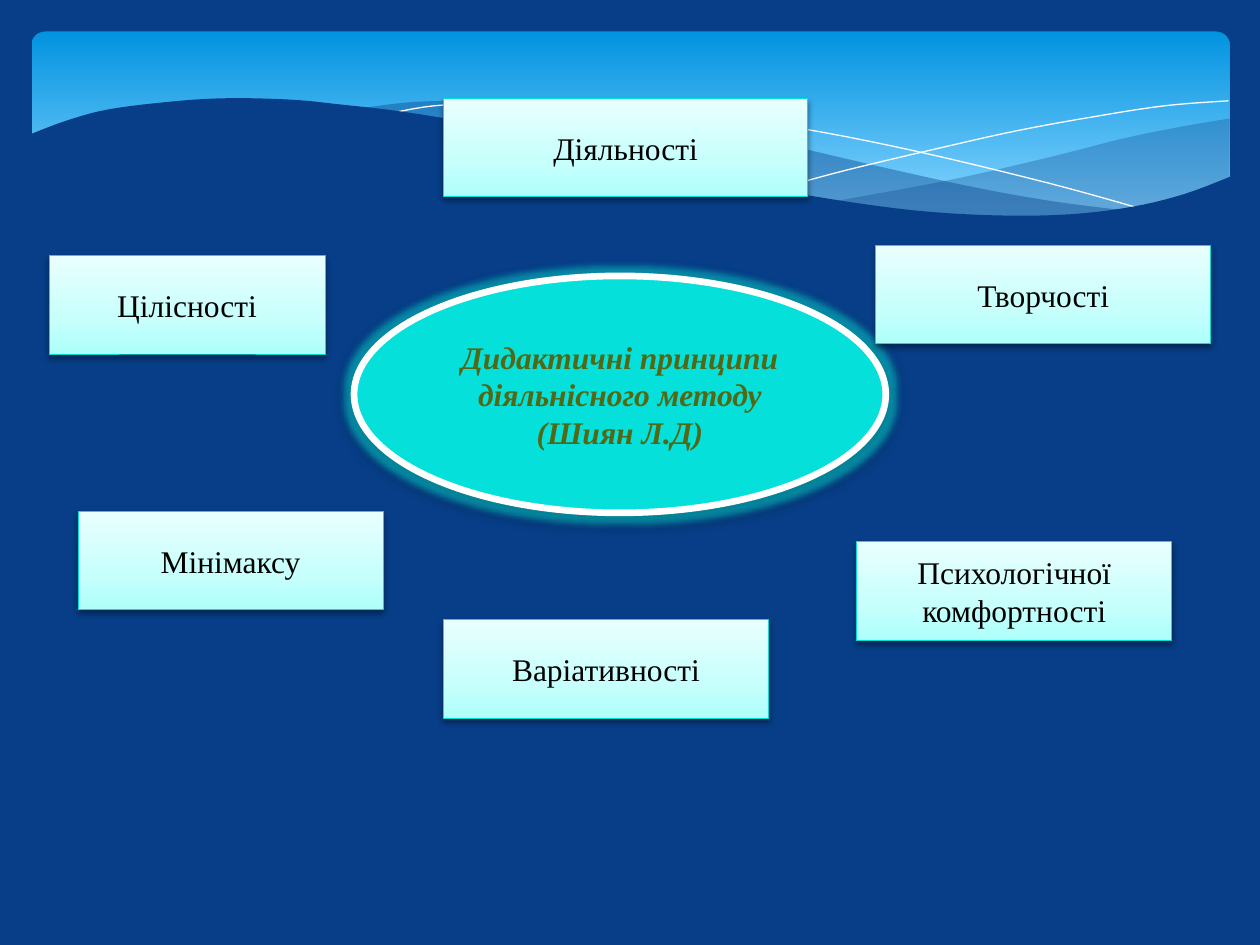
from copy import deepcopy
from dataclasses import dataclass

from lxml import etree
from pptx import Presentation
from pptx.dml.color import RGBColor
from pptx.enum.shapes import MSO_SHAPE
from pptx.enum.text import MSO_ANCHOR, PP_ALIGN
from pptx.oxml.ns import qn
from pptx.util import Inches, Pt

RECT = MSO_SHAPE.RECTANGLE
ROUND = MSO_SHAPE.ROUNDED_RECTANGLE
OVAL = MSO_SHAPE.OVAL
MIDDLE = MSO_ANCHOR.MIDDLE
CENTER = PP_ALIGN.CENTER


@dataclass(frozen=True)
class Theme:
    font: str = "Times New Roman"
    size: float = 18
    back: str = "073E87"
    white: str = "FFFFFF"
    black: str = "000000"
    teal: str = "05E0DB"
    edge: str = "00E0DB"
    olive: str = "526814"
    sky: tuple = ((0, "0293E0"), (90, "83D3FE"))
    mint: tuple = ((0, "AEFFFB"), (35, "C6FFFC"), (100, "E9FFFE"))


def rgb(code):
    return RGBColor.from_string(code)


def write(shape, text, font, size, color, bold=False, italic=False):
    frame = shape.text_frame
    frame.word_wrap = True
    frame.vertical_anchor = MIDDLE
    para = frame.paragraphs[0]
    para.alignment = CENTER
    run = para.add_run()
    run.text = text
    run.font.name = font
    run.font.size = Pt(size)
    run.font.bold = bold
    run.font.italic = italic
    run.font.color.rgb = rgb(color)


def smooth(knots, steps=5):
    pts = [knots[0], *knots, knots[-1]]
    out = []
    for a, b, c, d in zip(pts, pts[1:], pts[2:], pts[3:]):
        for i in range(steps):
            t = i / steps
            out.append(tuple(
                0.5 * (2 * q + (r - p) * t
                       + (2 * p - 5 * q + 4 * r - s) * t ** 2
                       + (3 * q - p - 3 * r + s) * t ** 3)
                for p, q, r, s in zip(a, b, c, d)))
    return out + [knots[-1]]


def shade(shape, stops, angle):
    shape.fill.gradient()
    shape.fill.gradient_angle = angle
    rack = shape._element.spPr.find(qn("a:gradFill")).find(qn("a:gsLst"))
    while len(rack) < len(stops):
        rack.append(deepcopy(rack[0]))
    for stop, (place, code) in zip(shape.fill.gradient_stops, stops):
        stop.position = place / 100
        stop.color.rgb = rgb(code)


def effect(shape, tag, color, alpha, **marks):
    group = shape._element.spPr.find(qn("a:effectLst"))
    node = etree.SubElement(group, qn(tag), {k: str(v) for k, v in marks.items()})
    tint = etree.SubElement(node, qn("a:srgbClr"), val=color)
    etree.SubElement(tint, qn("a:alpha"), val=str(alpha * 1000))


class Deck:
    def __init__(self, theme):
        self.theme = theme
        self.file = Presentation()
        self.file.slide_width = Inches(10)
        self.file.slide_height = Inches(7.5)
        self.slide = self.file.slides.add_slide(self.file.slide_layouts[6])
        fill = self.slide.background.fill
        fill.solid()
        fill.fore_color.rgb = rgb(theme.back)

    def shape(self, kind, box):
        item = self.slide.shapes.add_shape(kind, *map(Inches, box))
        item.shadow.inherit = False
        return item

    def outline(self, item, color, width):
        item.line.color.rgb = rgb(color)
        item.line.width = Pt(width)

    def drop(self, item):
        effect(item, "a:outerShdw", self.theme.black, 38,
               blurRad=Pt(3.5), dist=Pt(2), dir=5400000, rotWithShape=0)

    def banner(self, box):
        item = self.shape(ROUND, box)
        item.adjustments[0] = 0.07
        shade(item, self.theme.sky, 270)
        item.line.fill.background()

    def trace(self, points, close):
        spots = [(Inches(x), Inches(y)) for x, y in points]
        form = self.slide.shapes.build_freeform(*spots[0])
        form.add_line_segments(spots[1:], close=close)
        item = form.convert_to_shape()
        item.shadow.inherit = False
        return item

    def wave(self, *edges, alpha=100):
        item = self.trace([spot for edge in edges for spot in smooth(edge)], True)
        item.fill.solid()
        item.fill.fore_color.rgb = rgb(self.theme.back)
        if alpha < 100:
            tint = item._element.spPr.find(qn("a:solidFill"))[0]
            etree.SubElement(tint, qn("a:alpha"), val=str(alpha * 1000))
        item.line.fill.background()

    def thread(self, knots):
        item = self.trace(smooth(knots), False)
        item.fill.background()
        self.outline(item, self.theme.white, 0)

    def card(self, text, box):
        look = self.theme
        item = self.shape(RECT, box)
        shade(item, look.mint, 90)
        self.outline(item, look.edge, 0.5)
        self.drop(item)
        write(item, text, font=look.font, size=look.size, color=look.black)

    def hub(self, text, box):
        look = self.theme
        item = self.shape(OVAL, box)
        item.fill.solid()
        item.fill.fore_color.rgb = rgb(look.teal)
        self.outline(item, look.white, 3.82)
        effect(item, "a:glow", look.teal, 50, rad=Pt(8))
        self.drop(item)
        write(item, text, font=look.font, size=look.size, color=look.olive,
              bold=True, italic=True)


def main():
    deck = Deck(Theme())
    deck.banner((0.25, 0.25, 9.51, 1.56))
    deck.wave(
        [(9.76, 0.94), (9.35, 1.01), (8.91, 1.1), (8.32, 1.25), (7.53, 1.43),
         (6.61, 1.6)],
        [(6.61, 1.6), (7.05, 1.65), (7.57, 1.7), (8.14, 1.72), (8.63, 1.7),
         (9.05, 1.63), (9.42, 1.54), (9.76, 1.41)],
        alpha=29)
    deck.wave(
        [(8.93, 1.67), (8.37, 1.6), (7.75, 1.49), (7.06, 1.34), (6.29, 1.16),
         (5.69, 1.02), (5.14, 0.92), (4.65, 0.86), (4.2, 0.82), (3.8, 0.8),
         (3.28, 0.81), (2.86, 0.86)],
        [(2.86, 0.86), (3.42, 0.94), (4.04, 1.06), (4.91, 1.26), (5.66, 1.43),
         (6.34, 1.56), (6.95, 1.65), (7.48, 1.7), (8.07, 1.73), (8.57, 1.71),
         (8.93, 1.67)],
        alpha=40)
    deck.thread(
        [(3.09, 0.9), (3.44, 0.84), (3.87, 0.82), (4.33, 0.81), (4.89, 0.84),
         (5.56, 0.91), (6.36, 1.02), (7.27, 1.2), (8.31, 1.45), (9.07, 1.66)])
    deck.thread(
        [(6.13, 1.51), (6.72, 1.35), (7.48, 1.17), (8.06, 1.04), (8.66, 0.93),
         (9.24, 0.84), (9.75, 0.8)])
    deck.wave(
        [(9.77, 1.4), (9.4, 1.54), (8.99, 1.64), (8.5, 1.7), (7.93, 1.71),
         (7.26, 1.67), (6.47, 1.56), (5.55, 1.39), (4.75, 1.21), (4.18, 1.07),
         (3.65, 0.96), (3.15, 0.88), (2.71, 0.83), (2.3, 0.79), (1.77, 0.78),
         (1.32, 0.81), (0.85, 0.87), (0.52, 0.96), (0.23, 1.07)],
        [(0.23, 2.24), (9.77, 2.24)])
    deck.hub("Дидактичні принципи діяльнісного методу (Шиян Л.Д)",
             (2.81, 2.19, 4.22, 1.88))
    cards = (
        ("Цілісності", 0.39, 2.03, 2.19),
        ("Діяльності", 3.52, 0.78, 2.89),
        ("Творчості", 6.95, 1.95, 2.66),
        ("Психологічної комфортності", 6.8, 4.3, 2.5),
        ("Мінімаксу", 0.62, 4.06, 2.42),
        ("Варіативності", 3.52, 4.92, 2.58),
    )
    for text, left, top, width in cards:
        deck.card(text, (left, top, width, 0.78))
    deck.file.save("out.pptx")


if __name__ == "__main__":
    main()
